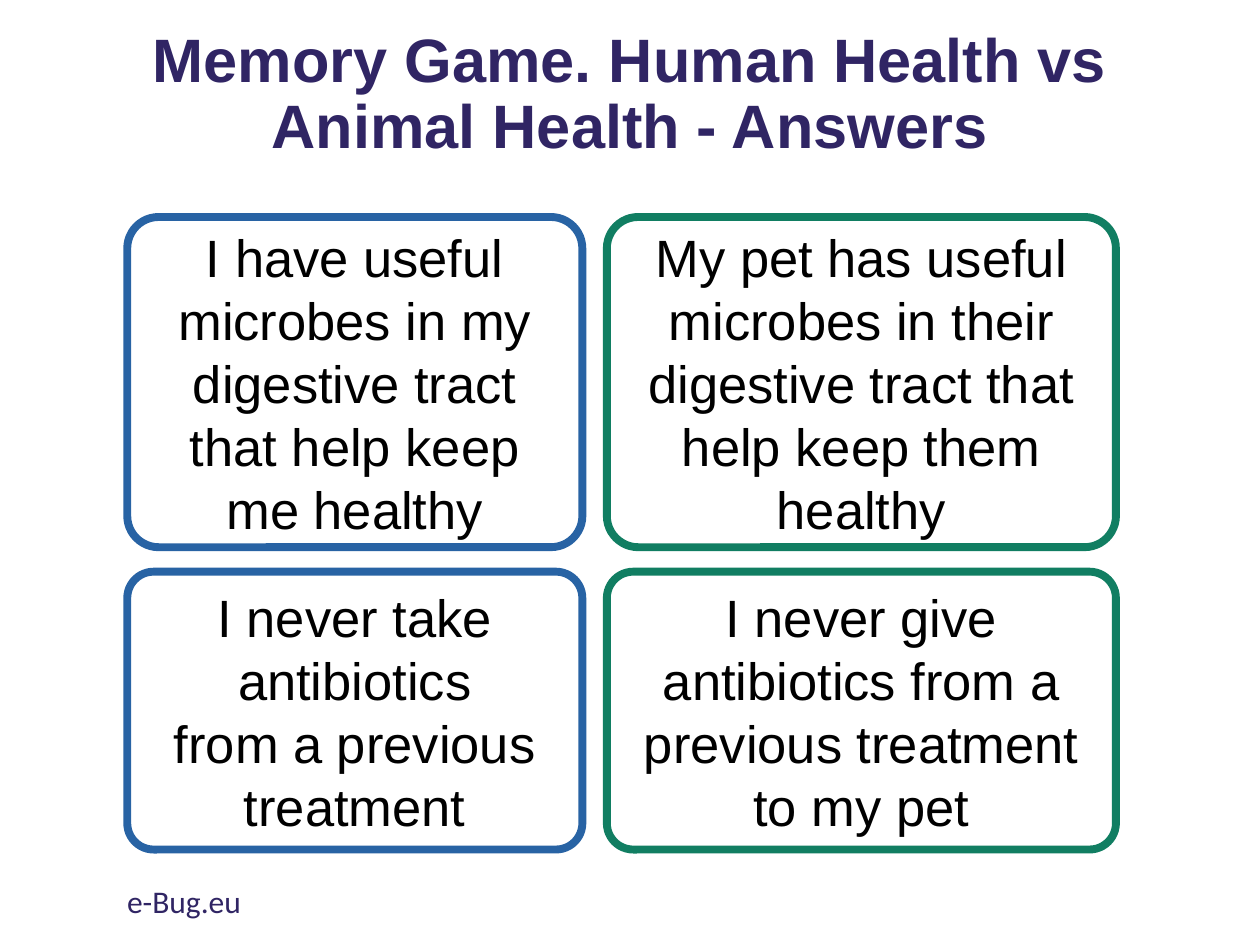
from dataclasses import dataclass

from pptx import Presentation
from pptx.dml.color import RGBColor
from pptx.enum.shapes import MSO_SHAPE
from pptx.enum.text import MSO_ANCHOR, PP_ALIGN
from pptx.util import Pt

ROUNDED = MSO_SHAPE.ROUNDED_RECTANGLE
MIDDLE, TOP = MSO_ANCHOR.MIDDLE, MSO_ANCHOR.TOP
CENTER, LEFT = PP_ALIGN.CENTER, PP_ALIGN.LEFT


@dataclass(frozen=True)
class Theme:
    heading: RGBColor = RGBColor(0x30, 0x25, 0x64)
    text: RGBColor = RGBColor(0, 0, 0)
    human: RGBColor = RGBColor(0x28, 0x63, 0xA4)
    animal: RGBColor = RGBColor(0x11, 0x7E, 0x62)
    font: str = "Arial"
    footer_font: str = "Calibri"
    title_size: float = 35
    card_size: float = 30
    footer_size: float = 18
    border: float = 4.5
    corner: float = 0.095


THEME = Theme()

# Each row pairs a human card with the matching animal card
CARD_ROWS = [
    ("I have useful microbes in my digestive tract that help keep me healthy",
     "My pet has useful\nmicrobes in their\ndigestive tract that\nhelp keep them\nhealthy"),
    ("I never take\nantibiotics\nfrom a previous\ntreatment",
     "I never give\nantibiotics from a\nprevious treatment to my pet"),
]


def write_text(shape, text, font, size, color, align, anchor, bold=False):
    frame = shape.text_frame
    frame.word_wrap = True
    frame.vertical_anchor = anchor
    frame.text = text
    for para in frame.paragraphs:
        para.alignment = align
        for span in para.runs:
            span.font.name = font
            span.font.size = Pt(size)
            span.font.bold = bold
            span.font.color.rgb = color


def add_title(page, left, top, width, height):
    box = page.shapes.add_textbox(Pt(left), Pt(top), Pt(width), Pt(height))
    write_text(box, "Memory Game. Human Health vs Animal Health - Answers",
               THEME.font, THEME.title_size, THEME.heading, CENTER, MIDDLE, bold=True)
    box.text_frame.paragraphs[0].line_spacing = 0.9


def add_card(page, text, color, left, top, width, height):
    card = page.shapes.add_shape(ROUNDED, Pt(left), Pt(top), Pt(width), Pt(height))
    card.adjustments[0] = THEME.corner
    card.shadow.inherit = False
    card.fill.background()
    card.line.color.rgb = color
    card.line.width = Pt(THEME.border)
    write_text(card, text, THEME.font, THEME.card_size, THEME.text, CENTER, MIDDLE)


def add_card_grid(page, left, top, width, height, gap=14):
    # The animal column is wider and the first row taller
    human_width = (width - gap) * 0.472
    first_height = (height - gap) * 0.543
    columns = [(left, human_width, THEME.human),
               (left + human_width + gap, width - gap - human_width, THEME.animal)]
    rows = [(top, first_height),
            (top + first_height + gap, height - gap - first_height)]
    for texts, (row_top, row_height) in zip(CARD_ROWS, rows):
        for text, (column_left, column_width, color) in zip(texts, columns):
            add_card(page, text, color, column_left, row_top, column_width, row_height)


def add_footer(page, left, top, width, height):
    box = page.shapes.add_textbox(Pt(left), Pt(top), Pt(width), Pt(height))
    write_text(box, "e-Bug.eu", THEME.footer_font, THEME.footer_size,
               THEME.heading, LEFT, TOP)


def main():
    deck = Presentation()
    deck.slide_width, deck.slide_height = Pt(720), Pt(540)
    page = deck.slides.add_slide(deck.slide_layouts[6])
    add_title(page, 50.4, 26, 619.2, 57.6)
    add_card_grid(page, 72.7, 124, 565, 361.5)
    add_footer(page, 65.5, 500.4, 243.4, 28.8)
    deck.save("out.pptx")


if __name__ == "__main__":
    main()
